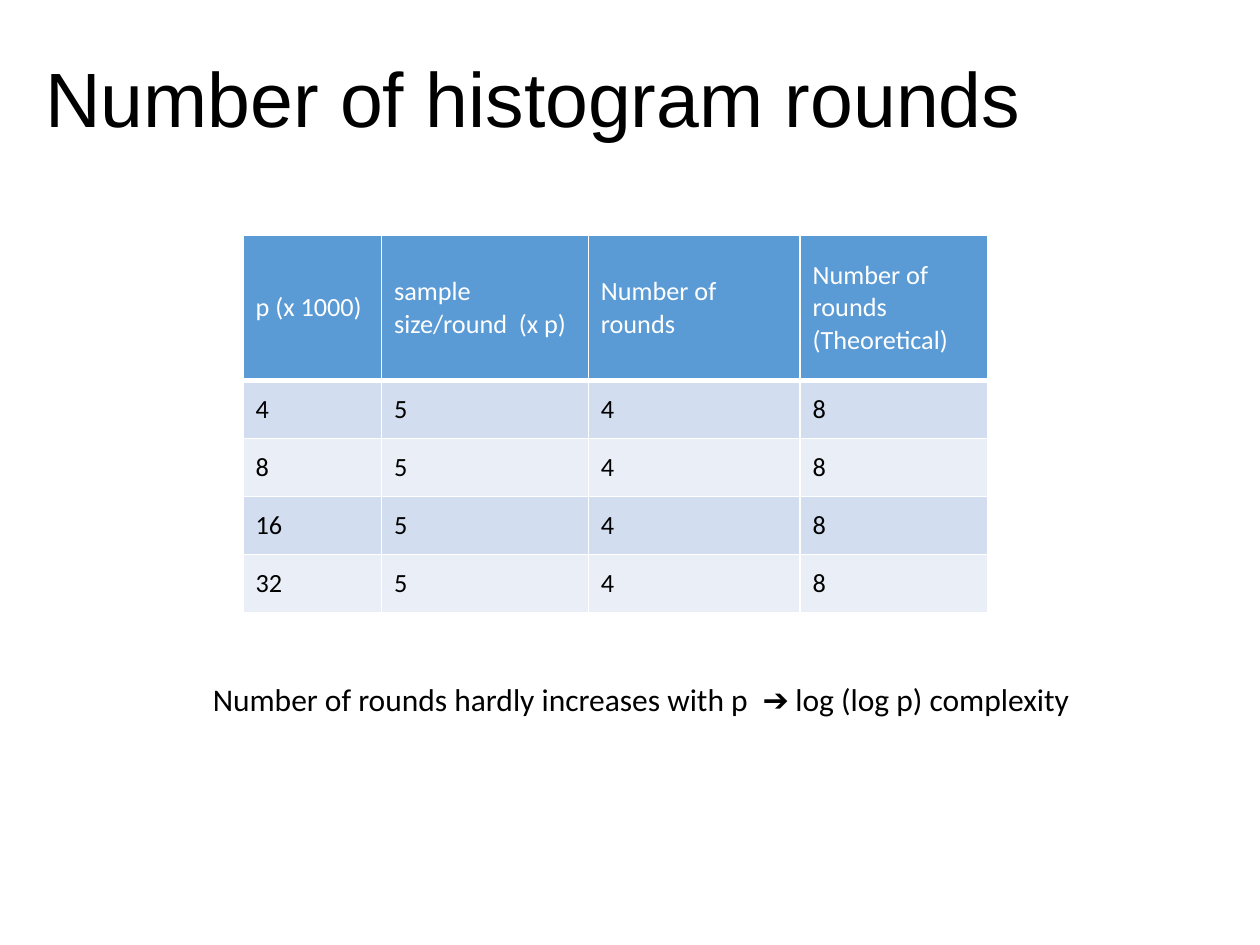
"""Build a slide with a table of histogram rounds and its conclusion."""
from dataclasses import dataclass

from lxml.etree import SubElement
from pptx import Presentation
from pptx.dml.color import RGBColor as Rgb
from pptx.enum.text import MSO_ANCHOR as Anchor, MSO_AUTO_SIZE as AutoSize
from pptx.oxml.ns import qn
from pptx.util import Cm, Pt


@dataclass(frozen=True)
class Theme:
    ink: str = "000000"
    paper: str = "FFFFFF"
    header: str = "5B9BD5"
    bands: tuple = ("D2DEEF", "EAEFF7")
    title_font: str = "Arial"
    body_font: str = "Calibri"
    title_size: int = 44
    note_size: int = 18
    table_size: int = 15
    thin_line: int = 1
    thick_line: int = 3


class SlideBuilder:
    def __init__(self, slide, theme):
        self.slide = slide
        self.theme = theme

    def add_span(self, para, text, font, size, color):
        span = para.add_run()
        span.text = text
        span.font.name = font
        span.font.size = Pt(size)
        span.font.color.rgb = Rgb.from_string(color)

    def text_box(self, left, top, width, height):
        box = self.slide.shapes.add_textbox(Cm(left), Cm(top), Cm(width), Cm(height))
        box.text_frame.word_wrap = True
        return box.text_frame

    def title(self, text, *place):
        frame = self.text_box(*place)
        frame.vertical_anchor = Anchor.MIDDLE
        para = frame.paragraphs[0]
        para.line_spacing = 0.9
        self.add_span(para, text, self.theme.title_font, self.theme.title_size, self.theme.ink)

    def note(self, spans, *place):
        frame = self.text_box(*place)
        frame.auto_size = AutoSize.SHAPE_TO_FIT_TEXT
        for text in spans:
            self.add_span(frame.paragraphs[0], text, self.theme.body_font,
                          self.theme.note_size, self.theme.ink)

    def border(self, cell, side, width):
        line = SubElement(cell._tc.get_or_add_tcPr(), qn(f"a:ln{side}"), w=str(Pt(width)))
        fill = SubElement(line, qn("a:solidFill"))
        SubElement(fill, qn("a:srgbClr"), val=self.theme.paper)

    def cell(self, cell, text, row):
        theme = self.theme
        thick_side = {0: "B", 1: "T"}.get(row)
        for side in "LRTB":
            self.border(cell, side, theme.thick_line if side == thick_side else theme.thin_line)
        cell.fill.solid()
        fill = theme.bands[(row - 1) % 2] if row else theme.header
        cell.fill.fore_color.rgb = Rgb.from_string(fill)
        cell.vertical_anchor = Anchor.MIDDLE
        self.add_span(cell.text_frame.paragraphs[0], text, theme.body_font, theme.table_size,
                      theme.ink if row else theme.paper)

    def table(self, rows, left, top, widths, heights):
        frame = self.slide.shapes.add_table(len(rows), len(widths), Cm(left), Cm(top),
                                            Cm(sum(widths)), Cm(sum(heights)))
        table = frame.table
        for column, width in zip(table.columns, widths):
            column.width = Cm(width)
        for row, height in zip(table.rows, heights):
            row.height = Cm(height)
        for row, values in enumerate(rows):
            for column, text in enumerate(values):
                self.cell(table.cell(row, column), text, row)


def main():
    deck = Presentation()
    deck.slide_width, deck.slide_height = Cm(25.4), Cm(19.05)
    page = SlideBuilder(deck.slides.add_slide(deck.slide_layouts[6]), Theme())
    page.title("Number of histogram rounds", 0.66, 0.61, 25.4, 2.92)
    page.note(["Number of rounds hardly increases with p  ", "➔", " log (log p) complexity"],
              4.04, 13.59, 18.67, 1.02)
    header = ["p (x 1000)", "sample size/round  (x p)", "Number of rounds",
              "Number of rounds (Theoretical)"]
    results = [[size, "5", "4", "8"] for size in ("4", "8", "16", "32")]
    page.table([header, *results], 4.9, 4.75, [2.79, 4.17, 4.27, 3.78],
               [2.92] + [1.17] * len(results))
    deck.save("out.pptx")


if __name__ == "__main__":
    main()
